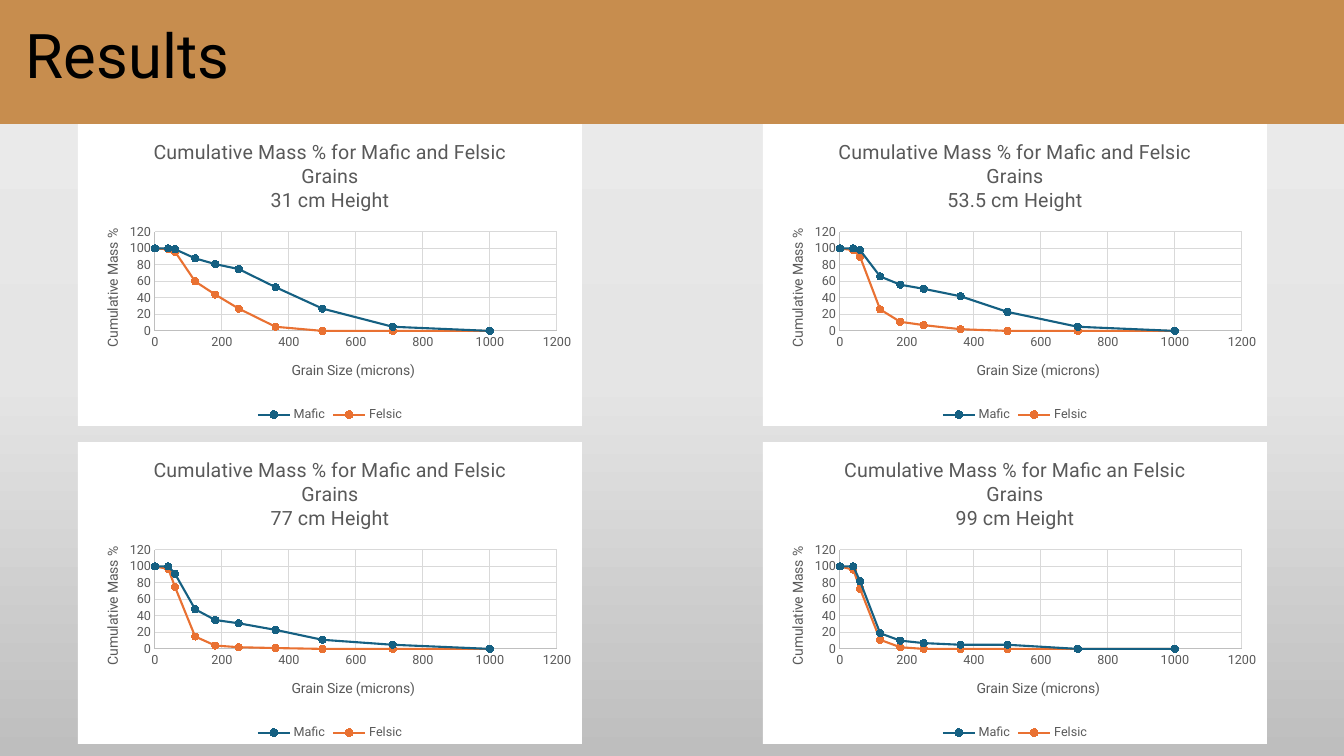
from copy import deepcopy

from lxml import etree
from pptx import Presentation
from pptx.chart.data import XyChartData
from pptx.dml.color import RGBColor
from pptx.enum.chart import (XL_CHART_TYPE, XL_LEGEND_POSITION,
                             XL_MARKER_STYLE, XL_TICK_MARK)
from pptx.enum.shapes import MSO_SHAPE
from pptx.enum.text import MSO_ANCHOR
from pptx.oxml import parse_xml
from pptx.oxml.ns import nsdecls, qn
from pptx.util import Pt

SMOOTH_SCATTER = XL_CHART_TYPE.XY_SCATTER_SMOOTH
LEGEND_BOTTOM = XL_LEGEND_POSITION.BOTTOM
CIRCLE = XL_MARKER_STYLE.CIRCLE
NO_TICK = XL_TICK_MARK.NONE
RECTANGLE = MSO_SHAPE.RECTANGLE
MIDDLE = MSO_ANCHOR.MIDDLE

FONT = "Roboto"
BLACK = RGBColor(0x00, 0x00, 0x00)
OCHRE = RGBColor(0xC7, 0x8D, 0x4E)
GREY_TEXT = RGBColor(0x59, 0x59, 0x59)
AXIS_GREY = RGBColor(0xBF, 0xBF, 0xBF)
GRID_GREY = RGBColor(0xD9, 0xD9, 0xD9)
MAFIC_BLUE = RGBColor(0x15, 0x60, 0x82)
FELSIC_ORANGE = RGBColor(0xE9, 0x71, 0x32)
BACKDROP = [(0, RGBColor(0xEC, 0xEC, 0xEC)),
            (0.5, RGBColor(0xE5, 0xE5, 0xE5)),
            (1, RGBColor(0xBE, 0xBE, 0xBE))]

GRAIN_SIZES = [1000, 710, 500, 360, 250, 180, 120, 60, 40, 0]
TITLE = "Cumulative Mass % for Mafic and Felsic Grains"
# Chart title, height, mafic values, felsic values
SAMPLES = [
    (TITLE, "31 cm Height",
     [0, 5, 27, 53, 75, 81, 88, 99, 100, 100],
     [0, 0, 0, 5, 27, 44, 60, 96, 99, 100]),
    (TITLE, "53.5 cm Height",
     [0, 5, 23, 42, 51, 56, 66, 98, 100, 100],
     [0, 0, 0, 2, 7, 11, 26, 90, 98, 100]),
    (TITLE, "77 cm Height",
     [0, 5, 11, 23, 31, 35, 48, 91, 100, 100],
     [0, 0, 0, 1, 2, 4, 15, 75, 97, 100]),
    ("Cumulative Mass % for Mafic an Felsic Grains", "99 cm Height",
     [0, 0, 5, 5, 7, 10, 19, 82, 100, 100],
     [0, 0, 0, 0, 0, 2, 11, 73, 96, 100]),
]
CHART_WIDTH, CHART_HEIGHT = 504, 302


def px(length):
    return round(length * 914400 / 100.8)


def style_font(font, size, color):
    font.name = FONT
    font.size = Pt(size)
    font.bold = False
    font.color.rgb = color


def add_run(para, text, size, color):
    run = para.add_run()
    run.text = text
    style_font(run.font, size, color)


def paint_background(page):
    fill = page.background.fill
    fill.gradient()
    fill.gradient_angle = 270
    stop_list = page.element.find(".//" + qn("a:gsLst"))
    stop_list.append(deepcopy(stop_list[0]))
    for stop, (position, color) in zip(fill.gradient_stops, BACKDROP):
        stop.position = position
        stop.color.rgb = color


def add_banner(page, left, top, width, height):
    banner = page.shapes.add_shape(RECTANGLE, px(left), px(top), px(width), px(height))
    banner.shadow.inherit = False
    banner.fill.solid()
    banner.fill.fore_color.rgb = OCHRE
    banner.line.fill.background()


def add_heading(page, text, left, top, width, height):
    box = page.shapes.add_textbox(px(left), px(top), px(width), px(height))
    frame = box.text_frame
    frame.word_wrap = True
    frame.vertical_anchor = MIDDLE
    para = frame.paragraphs[0]
    para.line_spacing = 0.9
    add_run(para, text, 44, BLACK)


def place_part(element, index, **places):
    """Set a manual layout, in px inside the chart, on a title or plot area."""
    old = element.find(qn("c:layout"))
    if old is not None:
        element.remove(old)
    layout = parse_xml(f"<c:layout {nsdecls('c')}><c:manualLayout/></c:layout>")
    manual = layout[0]
    settings = {"xMode": "edge", "yMode": "edge"}
    if "w" in places:
        settings = {"layoutTarget": "inner", **settings}
    for key, length in places.items():
        whole = CHART_WIDTH if key in "xw" else CHART_HEIGHT
        settings[key] = str(length / whole)
    for key, value in settings.items():
        etree.SubElement(manual, qn("c:" + key)).set("val", value)
    element.insert(index, layout)


def style_axis(axis, title, maximum, step, left, top):
    axis.minimum_scale = 0
    axis.maximum_scale = maximum
    axis.major_unit = step
    axis.major_tick_mark = axis.minor_tick_mark = NO_TICK
    axis.has_major_gridlines = True
    for line, color in ((axis.format.line, AXIS_GREY),
                        (axis.major_gridlines.format.line, GRID_GREY)):
        line.color.rgb = color
        line.width = Pt(0.75)
    style_font(axis.tick_labels.font, 9, GREY_TEXT)
    add_run(axis.axis_title.text_frame.paragraphs[0], title, 10, GREY_TEXT)
    place_part(axis.axis_title.element, 1, x=left, y=top)


def style_series(series, color):
    series.format.line.color.rgb = color
    series.format.line.width = Pt(1.5)
    marker = series.marker
    marker.style = CIRCLE
    marker.size = 5
    marker.format.fill.solid()
    marker.format.fill.fore_color.rgb = color
    marker.format.line.color.rgb = color


def add_grain_chart(page, left, top, title, height, mafic, felsic):
    data = XyChartData()
    for name, values in (("Mafic", mafic), ("Felsic", felsic)):
        series = data.add_series(name)
        for grain_size, mass in zip(GRAIN_SIZES, values):
            series.add_data_point(grain_size, mass)
    chart = page.shapes.add_chart(SMOOTH_SCATTER, px(left), px(top), px(CHART_WIDTH),
                                  px(CHART_HEIGHT), data).chart
    style_font(chart.font, 10, BLACK)
    chart.plots[0].vary_by_categories = False

    # White panel behind the plot
    chart_part = chart.element.find(qn("c:chart"))
    chart_part.addnext(parse_xml(
        f"<c:spPr {nsdecls('c', 'a')}><a:solidFill><a:srgbClr val='FFFFFF'/>"
        "</a:solidFill><a:ln><a:noFill/></a:ln></c:spPr>"))
    place_part(chart_part.find(qn("c:plotArea")), 0, x=77, y=108, w=402, h=99)

    # Title and legend
    chart.has_title = True
    frame = chart.chart_title.text_frame
    add_run(frame.paragraphs[0], title, 14, GREY_TEXT)
    add_run(frame.add_paragraph(), height, 14, GREY_TEXT)
    chart.has_legend = True
    chart.legend.position = LEGEND_BOTTOM
    chart.legend.include_in_layout = False
    style_font(chart.legend.font, 9, GREY_TEXT)

    # Axes and curves
    style_axis(chart.category_axis, "Grain Size (microns)", 1200, 200, 211, 235)
    style_axis(chart.value_axis, "Cumulative Mass %", 120, 20, 23, 102)
    body = chart.value_axis.axis_title.element.find(".//" + qn("a:bodyPr"))
    body.set("rot", "-5400000")
    body.set("vert", "horz")
    for series, color in zip(chart.plots[0].series, (MAFIC_BLUE, FELSIC_ORANGE)):
        style_series(series, color)


def main():
    deck = Presentation()
    deck.slide_width, deck.slide_height = px(1344), px(756)
    page = deck.slides.add_slide(deck.slide_layouts[6])
    paint_background(page)

    # Heading band
    add_banner(page, -9, -6, 1368, 130)
    add_heading(page, "Results", 16, -6, 1159, 130)

    # Two by two grid of charts
    for index, sample in enumerate(SAMPLES):
        row, column = divmod(index, 2)
        add_grain_chart(page, 78 + 685 * column, 124 + 318 * row, *sample)

    deck.save("out.pptx")


if __name__ == "__main__":
    main()
